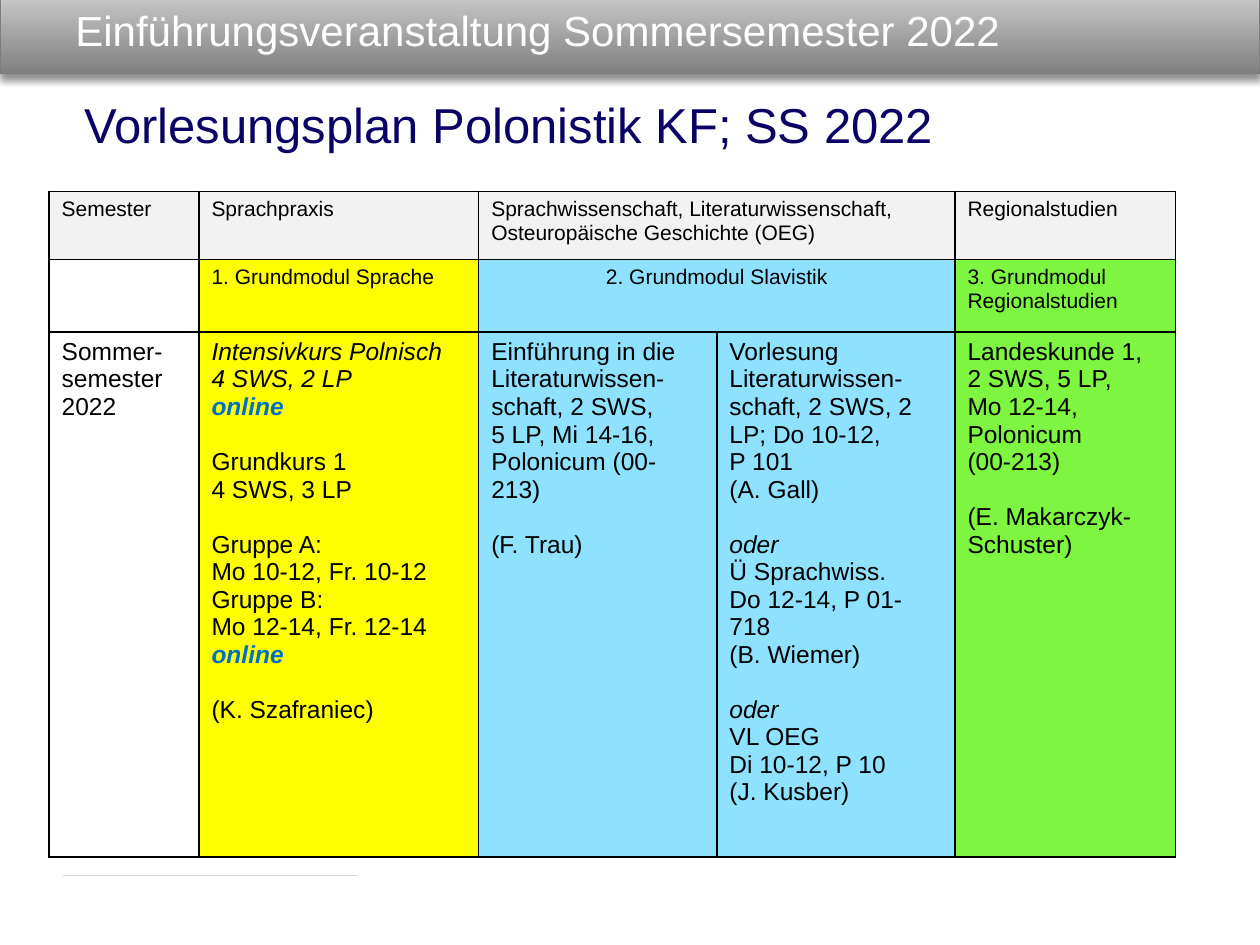
from lxml import etree
from pptx import Presentation
from pptx.dml.color import RGBColor
from pptx.enum.shapes import MSO_CONNECTOR, MSO_SHAPE
from pptx.enum.text import MSO_ANCHOR, PP_ALIGN
from pptx.oxml.ns import qn
from pptx.util import Cm, Pt

RECTANGLE = MSO_SHAPE.RECTANGLE
STRAIGHT = MSO_CONNECTOR.STRAIGHT
MIDDLE, TOP = MSO_ANCHOR.MIDDLE, MSO_ANCHOR.TOP
LEFT, CENTER = PP_ALIGN.LEFT, PP_ALIGN.CENTER

BLACK = RGBColor(0x00, 0x00, 0x00)
WHITE = RGBColor(0xFF, 0xFF, 0xFF)
NAVY = RGBColor(0x0A, 0x03, 0x65)
BLUE = RGBColor(0x00, 0x70, 0xC0)
DARK_GREY = RGBColor(0x80, 0x80, 0x80)
LIGHT_GREY = RGBColor(0xCD, 0xCD, 0xCD)
BAR_LINE = RGBColor(0x7D, 0x7D, 0x7D)
RULE_GREY = RGBColor(0xD8, 0xD8, 0xD8)
HEADER_GREY = RGBColor(0xF2, 0xF2, 0xF2)
YELLOW = RGBColor(0xFF, 0xFF, 0x00)
SKY = RGBColor(0x8F, 0xE2, 0xFF)
GREEN = RGBColor(0x7D, 0xF5, 0x41)

FONT = "Arial"
BLOCK_GAP = 15.7
COLUMN_WIDTHS = [3.02, 5.64, 4.8, 4.8, 4.45]
ROW_HEIGHTS = [1.37, 1.46, 10.59]
MODULE_FILLS = [None, YELLOW, SKY, SKY, GREEN]
ROW_FILLS = [[HEADER_GREY] * 5, MODULE_FILLS, MODULE_FILLS]

HEADERS = [
    "Semester",
    "Sprachpraxis",
    "Sprachwissenschaft, Literaturwissenschaft, Osteuropäische Geschichte (OEG)",
    "",
    "Regionalstudien",
]
MODULES = [
    "",
    "1. Grundmodul Sprache",
    "2. Grundmodul Slavistik",
    "",
    "3. Grundmodul Regionalstudien",
]
COURSES = [
    [["Sommer-semester 2022"]],
    [
        ["Intensivkurs Polnisch", "4 SWS, 2 LP", "online"],
        ["Grundkurs 1", "4 SWS, 3 LP"],
        ["Gruppe A:", "Mo 10-12, Fr. 10-12", "Gruppe B:", "Mo 12-14, Fr. 12-14", "online"],
        ["(K. Szafraniec)"],
    ],
    [
        ["Einführung in die Literaturwissen-schaft, 2 SWS,",
         "5 LP, Mi 14-16, Polonicum (00-213)"],
        ["(F. Trau)"],
    ],
    [
        ["Vorlesung Literaturwissen-schaft, 2 SWS, 2 LP; Do 10-12,", "P 101", "(A. Gall)"],
        ["oder", "Ü Sprachwiss.", "Do 12-14, P 01-718", "(B. Wiemer)"],
        ["oder", "VL OEG", "Di 10-12, P 10", "(J. Kusber)"],
    ],
    [
        ["Landeskunde 1,", "2 SWS, 5 LP,", "Mo 12-14,", "Polonicum", "(00-213)"],
        ["(E. Makarczyk-Schuster)"],
    ],
]
ITALIC = {"italic": True}
LINE_STYLES = {
    "Intensivkurs Polnisch": ITALIC,
    "4 SWS, 2 LP": ITALIC,
    "oder": ITALIC,
    "online": {"italic": True, "bold": True, "color": BLUE},
}


def write_line(paragraph, text, size, color=BLACK, bold=False, italic=False,
               align=LEFT, space_before=0):
    paragraph.alignment = align
    paragraph.space_before = Pt(space_before)
    run = paragraph.add_run()
    run.text = text
    font = run.font
    font.name, font.size = FONT, Pt(size)
    font.bold, font.italic = bold, italic
    font.color.rgb = color


def write_blocks(text_frame, blocks, size):
    for block_index, block in enumerate(blocks):
        for line_index, line in enumerate(block):
            is_first = block_index == line_index == 0
            paragraph = text_frame.paragraphs[0] if is_first else text_frame.add_paragraph()
            gap = BLOCK_GAP if block_index and line_index == 0 else 0
            write_line(paragraph, line, size, space_before=gap, **LINE_STYLES.get(line, {}))


def add_text(slide, left, top, width, height, text, anchor=TOP, **style):
    shape = slide.shapes.add_textbox(Cm(left), Cm(top), Cm(width), Cm(height))
    text_frame = shape.text_frame
    text_frame.word_wrap = True
    text_frame.vertical_anchor = anchor
    write_line(text_frame.paragraphs[0], text, **style)


def add_shadow(shape):
    shape.shadow.inherit = False
    effects = shape._element.spPr.find(qn("a:effectLst"))
    shadow = etree.SubElement(effects, qn("a:outerShdw"), blurRad=str(Pt(4)),
                              dist=str(Pt(3)), dir="5400000", rotWithShape="0")
    color = etree.SubElement(shadow, qn("a:srgbClr"), val="000000")
    etree.SubElement(color, qn("a:alpha"), val="43000")


def add_title_bar(slide, left, top, width, height):
    bar = slide.shapes.add_shape(RECTANGLE, Cm(left), Cm(top), Cm(width), Cm(height))
    bar.fill.gradient()
    bar.fill.gradient_angle = 90
    for stop, color in zip(bar.fill.gradient_stops, (DARK_GREY, LIGHT_GREY)):
        stop.color.rgb = color
    bar.line.color.rgb = BAR_LINE
    bar.line.width = Pt(0.75)
    add_shadow(bar)
    add_text(slide, left + 1.27, top + 0.2, 23.55, 1.2,
             "Einführungsveranstaltung Sommersemester 2022",
             anchor=MIDDLE, size=24, color=WHITE)


def add_footer_rule(slide, left, top, width):
    rule = slide.shapes.add_connector(STRAIGHT, Cm(left), Cm(top), Cm(left + width), Cm(top))
    rule.line.color.rgb = RULE_GREY
    rule.line.width = Pt(0.75)
    etree.SubElement(rule._element.spPr, qn("a:effectLst"))


def format_cell(cell, color):
    properties = cell._tc.get_or_add_tcPr()
    for side in ("a:lnL", "a:lnR", "a:lnT", "a:lnB"):
        border = etree.SubElement(properties, qn(side), w=str(Pt(1)))
        fill = etree.SubElement(border, qn("a:solidFill"))
        etree.SubElement(fill, qn("a:srgbClr"), val=str(BLACK))
    if color is None:
        cell.fill.background()
    else:
        cell.fill.solid()
        cell.fill.fore_color.rgb = color


def add_timetable(slide, left, top):
    frame = slide.shapes.add_table(len(ROW_HEIGHTS), len(COLUMN_WIDTHS), Cm(left), Cm(top),
                                   Cm(sum(COLUMN_WIDTHS)), Cm(sum(ROW_HEIGHTS)))
    table = frame.table
    table.first_row = table.horz_banding = False
    for column, width in zip(table.columns, COLUMN_WIDTHS):
        column.width = Cm(width)
    for row, height, colors in zip(table.rows, ROW_HEIGHTS, ROW_FILLS):
        row.height = Cm(height)
        for cell, color in zip(row.cells, colors):
            format_cell(cell, color)
    for row_index, texts in enumerate((HEADERS, MODULES)):
        table.cell(row_index, 2).merge(table.cell(row_index, 3))
        for column_index, text in enumerate(texts):
            if text:
                write_blocks(table.cell(row_index, column_index).text_frame, [[text]], 12)
    table.cell(1, 2).text_frame.paragraphs[0].alignment = CENTER
    for column_index, blocks in enumerate(COURSES):
        write_blocks(table.cell(2, column_index).text_frame, blocks, 14)


def main():
    presentation = Presentation()
    presentation.slide_width, presentation.slide_height = Cm(25.4), Cm(19.05)
    slide = presentation.slides.add_slide(presentation.slide_layouts[6])
    add_title_bar(slide, 0, -0.2, 25.4, 1.68)
    add_footer_rule(slide, 1.27, 17.65, 5.92)
    add_text(slide, 1.45, 1.78, 21.26, 1.45, "Vorlesungsplan Polonistik KF; SS 2022",
             size=28, color=NAVY)
    add_timetable(slide, 0.99, 3.86)
    presentation.save("out.pptx")


if __name__ == "__main__":
    main()
